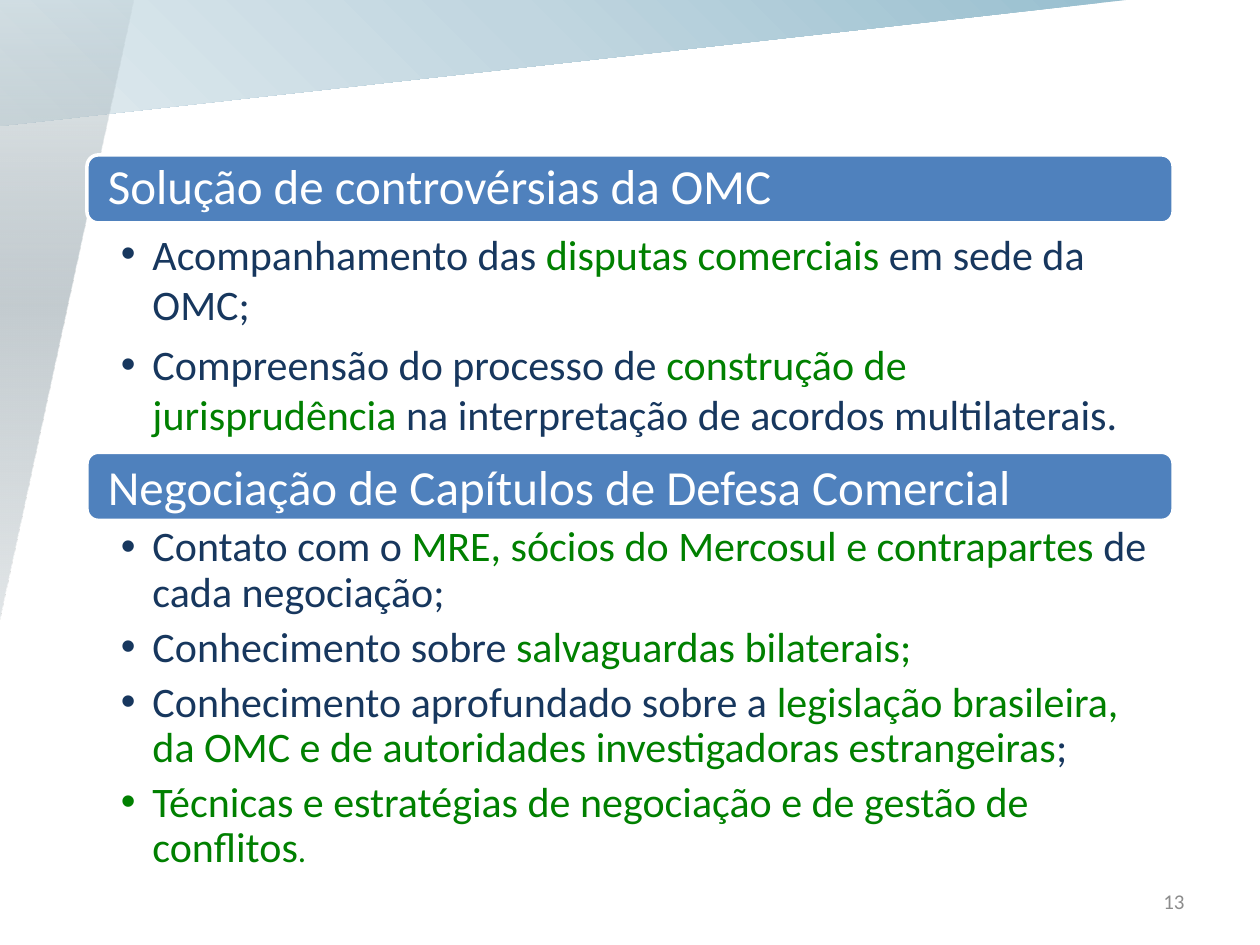
from collections import namedtuple
from dataclasses import dataclass

from lxml import etree
from pptx import Presentation
from pptx.dml.color import RGBColor
from pptx.enum.shapes import MSO_SHAPE
from pptx.enum.text import MSO_ANCHOR, PP_ALIGN
from pptx.oxml.ns import qn
from pptx.util import Emu, Inches, Pt

ROUNDED = MSO_SHAPE.ROUNDED_RECTANGLE
MIDDLE, TOP = MSO_ANCHOR.MIDDLE, MSO_ANCHOR.TOP
LEFT, RIGHT = PP_ALIGN.LEFT, PP_ALIGN.RIGHT
COLUMNS, ROWS = 100, 75
CELL = Inches(0.1)
HEADER_ROWS = 5.4

Box = namedtuple("Box", "left top width height")


@dataclass(frozen=True)
class Theme:
    font: str = "Calibri"
    header: str = "4F81BD"
    white: str = "FFFFFF"
    navy: str = "17375E"
    green: str = "008000"
    grey: str = "8C8C8C"
    header_size: int = 28
    body_size: int = 24
    stop_size: int = 19
    number_size: int = 12
    top_band: tuple = ((0, "98BFCF", 100), (50, "C1D6E0", 100), (100, "E1EBEF", 100))
    side_band: tuple = ((0, "9CADB4", 15), (50, "C4CCD0", 100), (100, "E2E6E8", 100))


THEME = Theme()


def cells(*counts):
    return [Emu(round(count * CELL)) for count in counts]


def plain(text, **style):
    return (text, {"color": THEME.navy, "size": THEME.body_size, **style})


def green(text, **style):
    return plain(text, color=THEME.green, **style)


def write(frame, paragraphs, margins=(0, 0, 0, 0), anchor=TOP, align=LEFT,
          line=1.0, after=0, bullet=False):
    frame.word_wrap = True
    frame.vertical_anchor = anchor
    (frame.margin_left, frame.margin_top,
     frame.margin_right, frame.margin_bottom) = cells(*margins)
    for index, runs in enumerate(paragraphs):
        paragraph = frame.add_paragraph() if index else frame.paragraphs[0]
        paragraph.alignment = align
        paragraph.line_spacing = line
        paragraph.space_after = Pt(after)
        if bullet:
            properties = paragraph._p.get_or_add_pPr()
            properties.set("marL", str(Inches(0.25)))
            properties.set("indent", str(-Inches(0.25)))
            etree.SubElement(properties, qn("a:buFont"), typeface="Arial")
            etree.SubElement(properties, qn("a:buChar"), char="•")
        for text, style in runs:
            run = paragraph.add_run()
            run.text = text
            run.font.name = THEME.font
            run.font.size = Pt(style["size"])
            run.font.color.rgb = RGBColor.from_string(style["color"])


def corner_band(slide, box, stops, angle):
    left, top, width, height = cells(*box)
    builder = slide.shapes.build_freeform(left, top)
    builder.add_line_segments([(left + width, top), (left, top + height)])
    band = builder.convert_to_shape()
    band.shadow.inherit = False
    band.line.fill.background()
    band.fill.gradient()
    band.fill.gradient_angle = angle
    stop_list = band._element.spPr.find(qn("a:gradFill")).find(qn("a:gsLst"))
    for stop in list(stop_list):
        stop_list.remove(stop)
    for position, color, opacity in stops:
        stop = etree.SubElement(stop_list, qn("a:gs"), pos=str(position * 1000))
        value = etree.SubElement(stop, qn("a:srgbClr"), val=color)
        if opacity < 100:
            etree.SubElement(value, qn("a:alpha"), val=str(opacity * 1000))


def section(slide, box, heading, points, heading_line, points_line):
    header = slide.shapes.add_shape(
        ROUNDED, *cells(box.left, box.top, box.width, HEADER_ROWS))
    header.shadow.inherit = False
    header.fill.solid()
    header.fill.fore_color.rgb = RGBColor.from_string(THEME.header)
    header.line.color.rgb = RGBColor.from_string(THEME.white)
    header.line.width = Pt(2)
    title = plain(heading, color=THEME.white, size=THEME.header_size)
    write(header.text_frame, [[title]], margins=(1.4, 0, 1.4, 0),
          anchor=MIDDLE, line=heading_line)
    body = slide.shapes.add_textbox(
        *cells(box.left, box.top + HEADER_ROWS + 0.1,
               box.width, box.height - HEADER_ROWS - 0.1))
    write(body.text_frame, points, margins=(2.7, 0.3, 1.9, 0.3),
          line=points_line, after=5.5, bullet=True)


def page_number(slide, box, number):
    label = slide.shapes.add_textbox(*cells(*box))
    write(label.text_frame,
          [[plain(number, color=THEME.grey, size=THEME.number_size)]],
          margins=(1, 0.5, 1, 0.5), anchor=MIDDLE, align=RIGHT)


DISPUTES = [
    [plain("Acompanhamento das "), green("disputas comerciais "),
     plain("em sede da OMC;")],
    [plain("Compreensão do processo de "),
     green("construção de jurisprudência "),
     plain("na interpretação de acordos multilaterais.")],
]
NEGOTIATION = [
    [plain("Contato com o "),
     green("MRE, sócios do Mercosul e contrapartes "),
     plain("de cada negociação;")],
    [plain("Conhecimento sobre "), green("salvaguardas bilaterais;")],
    [plain("Conhecimento aprofundado sobre a "),
     green("legislação brasileira, da OMC e de autoridades "
           "investigadoras estrangeiras"),
     plain(";")],
    [green("Técnicas e estratégias de negociação e de gestão de conflitos"),
     green(".", size=THEME.stop_size)],
]


def main():
    deck = Presentation()
    deck.slide_width, deck.slide_height = cells(COLUMNS, ROWS)
    slide = deck.slides.add_slide(deck.slide_layouts[6])
    corner_band(slide, Box(0, 0, 89.4, 10), THEME.top_band, 225)
    corner_band(slide, Box(0, 0, 10.6, 49.3), THEME.side_band, 270)
    section(slide, Box(6.9, 12.3, 86.2, 23.6), "Solução de controvérsias da OMC",
            DISPUTES, heading_line=0.9, points_line=1.0)
    section(slide, Box(6.9, 35.9, 86.2, 25.4),
            "Negociação de Capítulos de Defesa Comercial",
            NEGOTIATION, heading_line=1.0, points_line=0.9)
    page_number(slide, Box(71.7, 69.5, 23.3, 4), "13")
    deck.save("out.pptx")


if __name__ == "__main__":
    main()
